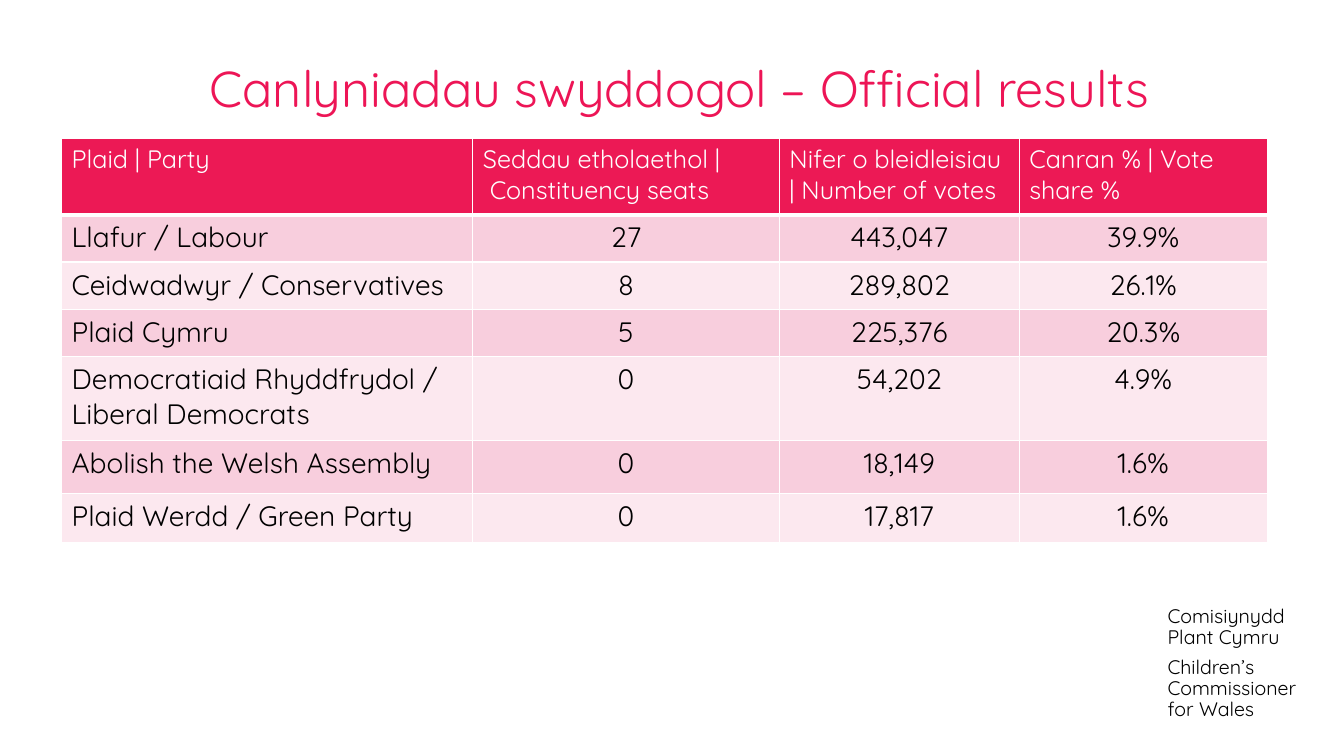
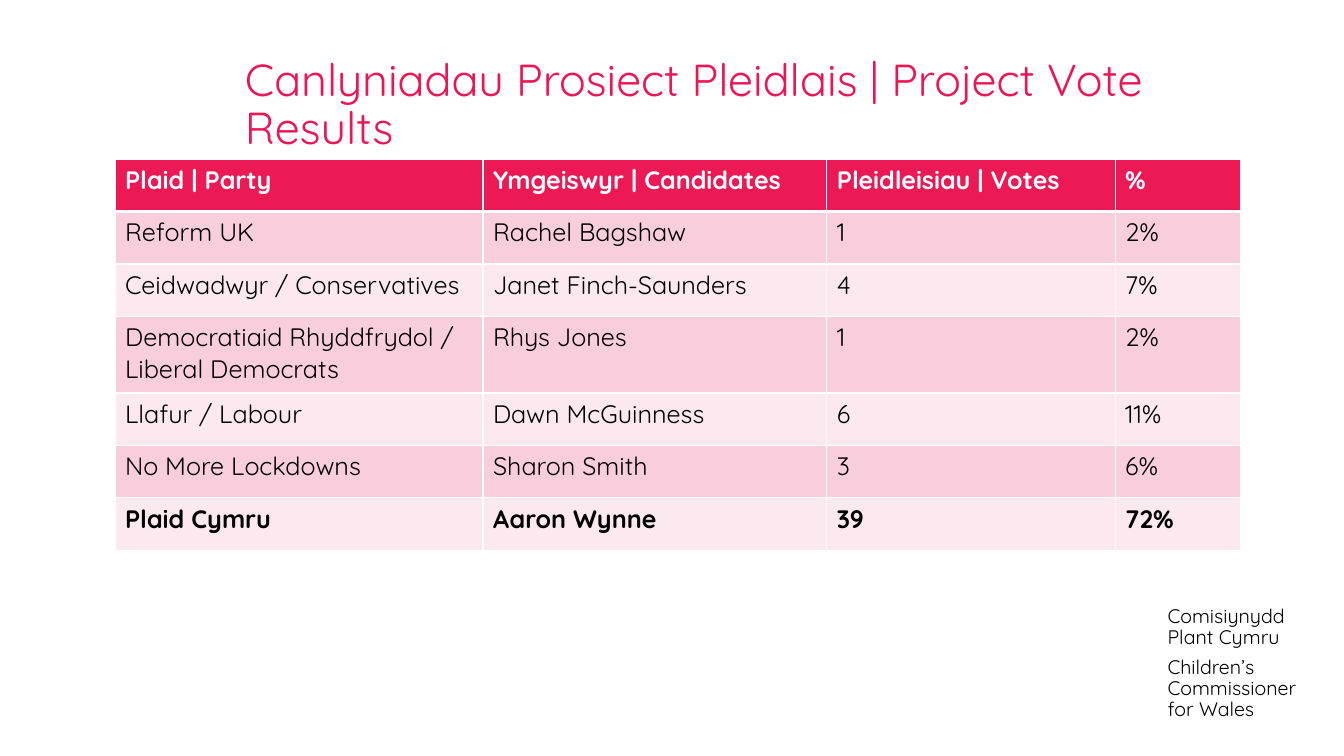
from lxml import etree
from pptx import Presentation
from pptx.dml.color import RGBColor
from pptx.enum.text import MSO_ANCHOR, MSO_AUTO_SIZE, PP_ALIGN
from pptx.oxml.ns import qn
from pptx.util import Inches, Pt

LEFT, CENTER = PP_ALIGN.LEFT, PP_ALIGN.CENTER
TOP, MIDDLE = MSO_ANCHOR.TOP, MSO_ANCHOR.MIDDLE
NO_FIT, GROW = MSO_AUTO_SIZE.NONE, MSO_AUTO_SIZE.SHAPE_TO_FIT_TEXT
TITLE_ONLY = 5

FONT = "Quicksand"
COLORS = {
    "title": "ED1556",
    "header": "EC1955",
    "odd": "F8CEDD",
    "even": "FCE8EF",
    "white": "FFFFFF",
    "black": "000000",
}

OFFICIAL = {
    "title": "Canlyniadau swyddogol – Official results",
    "title_box": (2.08, 0.63, 10.26, 0.91),
    "title_size": 36,
    "table_at": (0.61, 1.37),
    "widths": [4.08, 3.04, 2.38, 2.46],
    "heights": [0.76, 0.47, 0.47, 0.47, 0.83, 0.53, 0.48],
    "body_size": 20,
    "number_align": CENTER,
    "bold_rows": [],
    "rows": [
        ["Plaid | Party", "Seddau etholaethol |\n Constituency seats",
         "Nifer o bleidleisiau | Number of votes", "Canran % | Vote share %"],
        ["Llafur / Labour", "27", "443,047", "39.9%"],
        ["Ceidwadwyr / Conservatives", "8", "289,802", "26.1%"],
        ["Plaid Cymru", "5", "225,376", "20.3%"],
        ["Democratiaid Rhyddfrydol / Liberal Democrats", "0", "54,202", "4.9%"],
        ["Abolish the Welsh Assembly", "0", "18,149", "1.6%"],
        ["Plaid Werdd / Green Party", "0", "17,817", "1.6%"],
    ],
}

PROJECT_VOTE = {
    "title": "Canlyniadau Prosiect Pleidlais | Project Vote Results",
    "title_box": (2.43, 0.57, 9.41, 0.76),
    "title_size": 32,
    "table_at": (1.14, 1.58),
    "widths": [3.65, 3.41, 2.86, 1.24],
    "heights": [0.52, 0.52, 0.52, 0.76, 0.52, 0.52, 0.52],
    "body_size": 18,
    "number_align": LEFT,
    "bold_rows": [0, 6],
    "rows": [
        ["Plaid | Party", "Ymgeiswyr | Candidates", "Pleidleisiau | Votes", "%"],
        ["Reform UK", "Rachel Bagshaw", "1", "2%"],
        ["Ceidwadwyr / Conservatives", "Janet Finch-Saunders", "4", "7%"],
        ["Democratiaid Rhyddfrydol / Liberal Democrats", "Rhys Jones", "1", "2%"],
        ["Llafur / Labour", "Dawn McGuinness", "6", "11%"],
        ["No More Lockdowns", "Sharon Smith", "3", "6%"],
        ["Plaid Cymru", "Aaron Wynne", "39", "72%"],
    ],
}


def set_all(target, values):
    for name, value in values.items():
        setattr(target, name, value)


def style_paragraph(paragraph, size, color, bold=False, **spacing):
    set_all(paragraph, spacing)
    set_all(paragraph.font, {"name": FONT, "size": Pt(size), "bold": bold})
    paragraph.font.color.rgb = RGBColor.from_string(COLORS[color])


def format_frame(frame, anchor, fit):
    set_all(frame, {
        "margin_left": 0, "margin_top": 0, "margin_right": 0, "margin_bottom": 0,
        "word_wrap": True, "vertical_anchor": anchor, "auto_size": fit,
    })


def add_commissioner(slide):
    box = slide.shapes.add_textbox(*map(Inches, (11.58, 6.01, 1.38, 1.15)))
    frame = box.text_frame
    format_frame(frame, MIDDLE, GROW)
    welsh, english = frame.paragraphs[0], frame.add_paragraph()
    welsh.text = "Comisiynydd\vPlant Cymru"
    english.text = "Children’s\vCommissioner\vfor Wales"
    style_paragraph(welsh, 14, "black", line_spacing=0.9, space_after=Pt(6))
    style_paragraph(english, 14, "black", line_spacing=0.9)


def set_title(slide, text, box, size):
    title = slide.shapes.title
    left, top, width, height = map(Inches, box)
    set_all(title, {"left": left, "top": top, "width": width, "height": height})
    title.text_frame.text = text
    format_frame(title.text_frame, TOP, NO_FIT)
    style_paragraph(title.text_frame.paragraphs[0], size, "title",
                    alignment=LEFT, line_spacing=0.9)


def add_borders(cell, row):
    widths = {"L": 1, "R": 1, "T": 3 if row == 1 else 1, "B": 3 if row == 0 else 1}
    properties = cell._tc.get_or_add_tcPr()
    for side, width in widths.items():
        line = etree.SubElement(properties, qn(f"a:ln{side}"), w=str(Pt(width)))
        fill = etree.SubElement(line, qn("a:solidFill"))
        etree.SubElement(fill, qn("a:srgbClr"), val=COLORS["white"])


def fill_cell(cell, text, row, size, bold, align):
    band = "header" if row == 0 else ("odd" if row % 2 else "even")
    add_borders(cell, row)
    cell.fill.solid()
    cell.fill.fore_color.rgb = RGBColor.from_string(COLORS[band])
    cell.text = text
    for paragraph in cell.text_frame.paragraphs:
        style_paragraph(paragraph, size, "black" if row else "white", bold,
                        alignment=align)


def add_results(slide, results):
    rows, widths, heights = results["rows"], results["widths"], results["heights"]
    lengths = (*results["table_at"], sum(widths), sum(heights))
    table = slide.shapes.add_table(len(rows), len(widths),
                                   *map(Inches, lengths)).table
    for column, width in zip(table.columns, widths):
        column.width = Inches(width)
    for row, (values, height) in enumerate(zip(rows, heights)):
        table.rows[row].height = Inches(height)
        for column, text in enumerate(values):
            fill_cell(table.cell(row, column), text, row,
                      results["body_size"] if row else 18,
                      row in results["bold_rows"],
                      results["number_align"] if row and column else LEFT)


def main():
    deck = Presentation()
    set_all(deck, {"slide_width": Inches(13.33), "slide_height": Inches(7.5)})
    for results in (OFFICIAL, PROJECT_VOTE):
        slide = deck.slides.add_slide(deck.slide_layouts[TITLE_ONLY])
        add_commissioner(slide)
        set_title(slide, results["title"], results["title_box"], results["title_size"])
        add_results(slide, results)
    deck.save("out.pptx")


if __name__ == "__main__":
    main()
